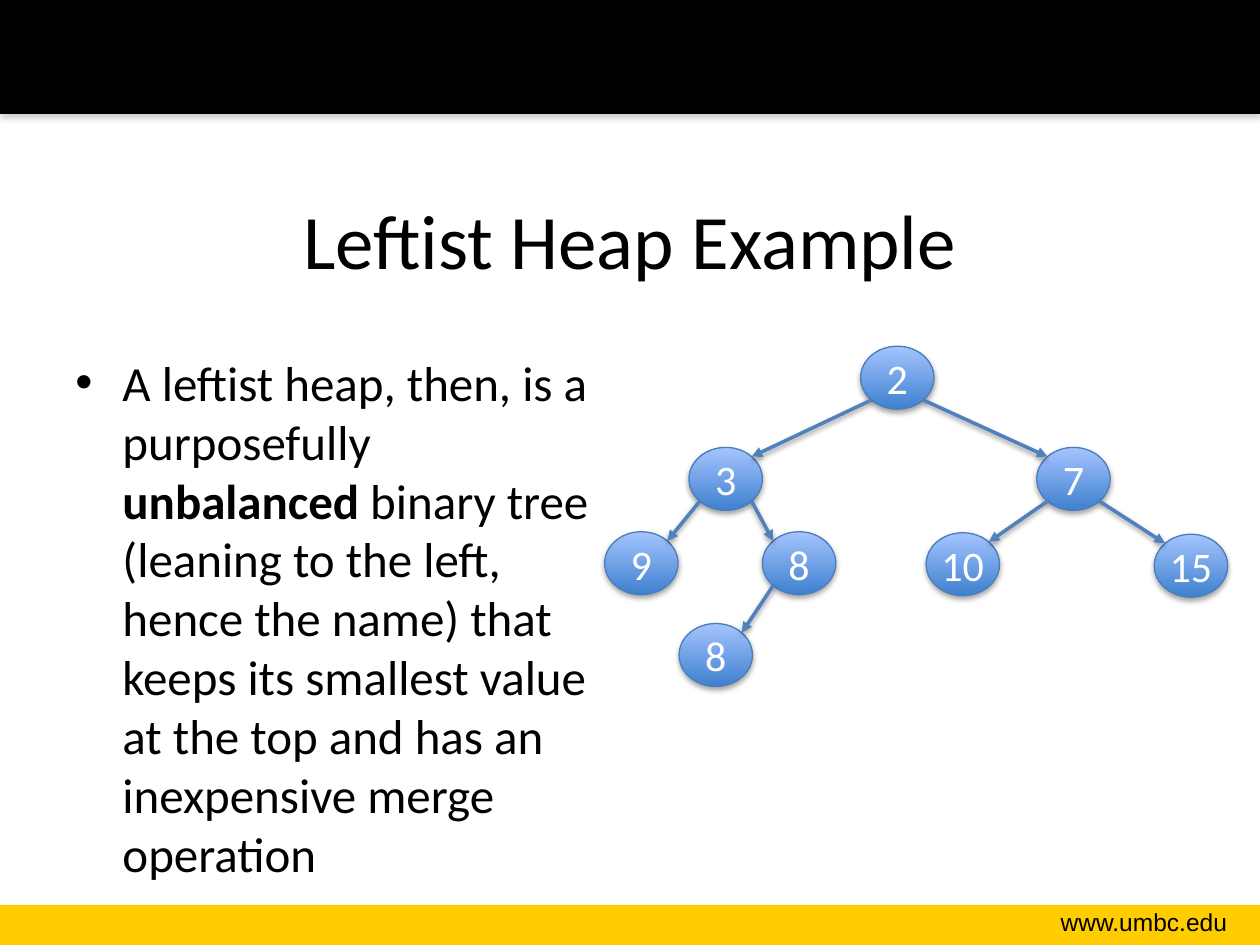
import math

import pptx
import pptx.dml.color
import pptx.enum.shapes
import pptx.enum.text
import pptx.oxml
import pptx.oxml.ns
import pptx.util

Cm = pptx.util.Cm
Pt = pptx.util.Pt
RGBColor = pptx.dml.color.RGBColor
Shape = pptx.enum.shapes.MSO_SHAPE
Align = pptx.enum.text.PP_ALIGN
Anchor = pptx.enum.text.MSO_ANCHOR

BLACK = RGBColor(0x00, 0x00, 0x00)
WHITE = RGBColor(0xFF, 0xFF, 0xFF)
GOLD = RGBColor(0xFF, 0xCC, 0x00)
GREY = RGBColor(0x80, 0x80, 0x80)
NODE_DARK = RGBColor(0x3F, 0x80, 0xCE)
NODE_LIGHT = RGBColor(0xA4, 0xC4, 0xFF)
NODE_EDGE = RGBColor(0x4B, 0x7E, 0xBC)
ARROW = RGBColor(0x4F, 0x81, 0xBD)

PAGE_WIDTH, PAGE_HEIGHT = 25.4, 19.05
NODE_WIDTH, NODE_HEIGHT = 1.48, 1.27

# name: (label, left, top), in centimetres
NODES = {
    "root": ("2", 17.35, 6.98),
    "left": ("3", 13.89, 9.02),
    "left.left": ("9", 12.19, 10.72),
    "left.right": ("8", 15.37, 10.72),
    "left.right.left": ("8", 13.69, 12.57),
    "right": ("7", 20.9, 9.02),
    "right.left": ("10", 18.67, 10.74),
    "right.right": ("15", 23.27, 10.77),
}
EDGES = [
    ("root", "left"),
    ("root", "right"),
    ("left", "left.left"),
    ("left", "left.right"),
    ("left.right", "left.right.left"),
    ("right", "right.left"),
    ("right", "right.right"),
]


def xml(markup):
    """Make one DrawingML element; its tag must be followed by a space."""
    head, mark, rest = markup.partition(" ")
    return pptx.oxml.parse_xml(
        f"{head} {pptx.oxml.ns.nsdecls('a')}{mark}{rest}")


def add_shadow(shape, color, opacity, distance):
    """Append a soft shadow below; the line must be set first."""
    shape.element.spPr.append(xml(
        f'<a:effectLst ><a:outerShdw blurRad="{Pt(3.1)}" dist="{Pt(distance)}" '
        f'dir="5400000" rotWithShape="0"><a:srgbClr val="{color}">'
        f'<a:alpha val="{opacity * 1000}"/></a:srgbClr></a:outerShdw></a:effectLst>'))


class HeapSlide:
    def __init__(self, page, font="Calibri"):
        self.page = page
        self.font = font

    def add_span(self, para, text, size, color=BLACK, bold=False, font=None):
        span = para.add_run()
        span.text = text
        span.font.name = font or self.font
        span.font.size = Pt(size)
        span.font.color.rgb = color
        span.font.bold = bold

    def band(self, top, height, color):
        band = self.page.shapes.add_shape(
            Shape.RECTANGLE, 0, Cm(top), Cm(PAGE_WIDTH), Cm(height))
        band.fill.solid()
        band.fill.fore_color.rgb = color
        band.line.fill.background()
        band.shadow.inherit = False
        return band

    def header(self, height):
        band = self.band(0, height, BLACK)
        band.shadow.inherit = True
        add_shadow(band, GREY, 35, 1.8)

    def title(self, text):
        title = self.page.shapes.title
        title.left, title.top = Cm(1.27), Cm(3.23)
        title.width, title.height = Cm(22.86), Cm(3.17)
        title.text_frame.vertical_anchor = Anchor.MIDDLE
        para = title.text_frame.paragraphs[0]
        para.alignment = Align.CENTER
        self.add_span(para, text, 44)

    def text_box(self, left, top, width, height):
        """Add a wrapping text box and return its first paragraph."""
        box = self.page.shapes.add_textbox(
            Cm(left), Cm(top), Cm(width), Cm(height))
        box.text_frame.word_wrap = True
        return box.text_frame.paragraphs[0]

    def bullet(self, spans):
        """Add one bulleted paragraph from (text, bold) pairs."""
        para = self.text_box(1.27, 6.98, 11.23, 10.03)
        properties = para._p.get_or_add_pPr()
        properties.set("marL", str(Cm(0.95)))
        properties.set("indent", str(Cm(-0.95)))
        properties.append(xml('<a:buFont typeface="Arial"/>'))
        properties.append(xml('<a:buChar char="•"/>'))
        for text, bold in spans:
            self.add_span(para, text, 28, bold=bold)

    def footer(self, text):
        para = self.text_box(19.94, 18.16, 5.05, 0.86)
        para.alignment = Align.RIGHT
        self.add_span(para, text, 14, font="Arial")

    def node(self, label, left, top):
        node = self.page.shapes.add_shape(
            Shape.OVAL, Cm(left), Cm(top), Cm(NODE_WIDTH), Cm(NODE_HEIGHT))
        node.fill.gradient()
        node.fill.gradient_angle = 90
        for stop, color in zip(node.fill.gradient_stops, (NODE_DARK, NODE_LIGHT)):
            stop.color.rgb = color
        node.line.color.rgb = NODE_EDGE
        node.line.width = Pt(0.75)
        add_shadow(node, BLACK, 35, 1.8)
        frame = node.text_frame
        frame.word_wrap = False
        frame.vertical_anchor = Anchor.MIDDLE
        frame.paragraphs[0].alignment = Align.CENTER
        self.add_span(frame.paragraphs[0], label, 24, WHITE)

    def edge(self, parent, child):
        """Join the facing diagonal points of two (left, top) nodes."""
        side = 1 if child[0] > parent[0] else -1
        reach = math.sqrt(0.5)

        def rim(node, across, down):
            return (Cm(node[0] + NODE_WIDTH / 2 * (1 + across * reach)),
                    Cm(node[1] + NODE_HEIGHT / 2 * (1 + down * reach)))

        arrow = self.page.shapes.add_connector(
            pptx.enum.shapes.MSO_CONNECTOR.STRAIGHT,
            *rim(parent, side, 1), *rim(child, -side, -1))
        arrow.line.color.rgb = ARROW
        arrow.line.width = Pt(2)
        line = arrow.element.spPr.find(pptx.oxml.ns.qn("a:ln"))
        line.append(xml('<a:tailEnd type="triangle"/>'))
        add_shadow(arrow, BLACK, 38, 1.6)


def main():
    deck = pptx.Presentation()
    deck.slide_width, deck.slide_height = Cm(PAGE_WIDTH), Cm(PAGE_HEIGHT)
    slide = HeapSlide(deck.slides.add_slide(deck.slide_layouts[5]))

    slide.band(18.24, PAGE_HEIGHT - 18.24, GOLD)
    slide.header(2.3)
    slide.footer("www.umbc.edu")
    slide.title("Leftist Heap Example")
    slide.bullet([
        ("A leftist heap, then, is a purposefully ", False),
        ("unbalanced", True),
        (" binary tree (leaning to the left, hence the name) that keeps its "
         "smallest value at the top and has an inexpensive merge operation", False),
    ])
    for label, left, top in NODES.values():
        slide.node(label, left, top)
    for parent, child in EDGES:
        slide.edge(NODES[parent][1:], NODES[child][1:])

    deck.save("out.pptx")


if __name__ == "__main__":
    main()
